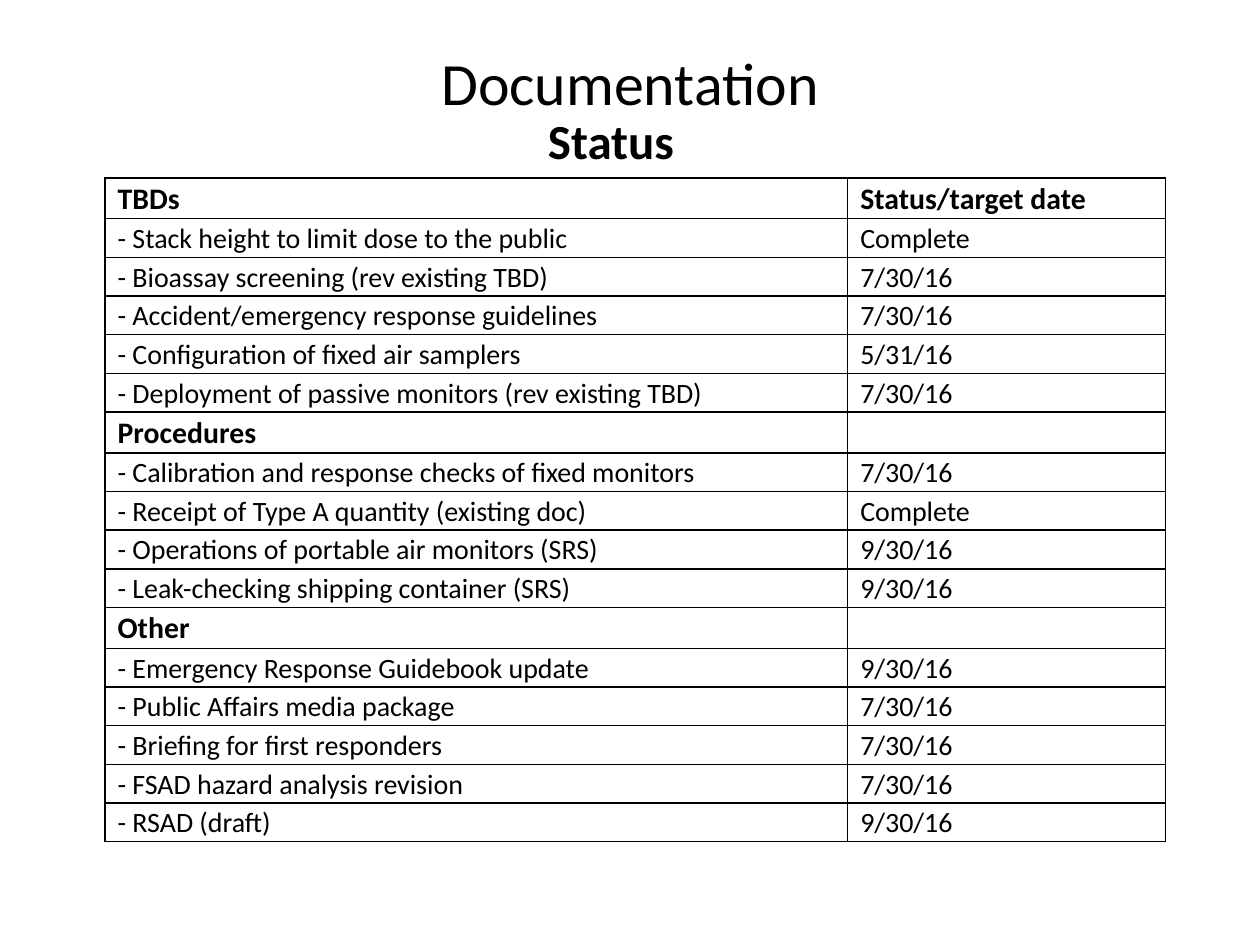
from lxml.etree import SubElement
from pptx import Presentation
from pptx.dml.color import RGBColor
from pptx.enum.text import MSO_ANCHOR, PP_ALIGN
from pptx.oxml.ns import qn
from pptx.util import Pt

FONT = "Calibri"
BLACK = "000000"
TITLE = "Documentation"
SUBTITLE = "Status"
SECTIONS = [
    ("TBDs", "Status/target date", [
        ("Stack height to limit dose to the public", "Complete"),
        ("Bioassay screening (rev existing TBD)", "7/30/16"),
        ("Accident/emergency response guidelines", "7/30/16"),
        ("Configuration of fixed air samplers", "5/31/16"),
        ("Deployment of passive monitors (rev existing TBD)", "7/30/16"),
    ]),
    ("Procedures", "", [
        ("Calibration and response checks of fixed monitors", "7/30/16"),
        ("Receipt of Type A quantity (existing doc)", "Complete"),
        ("Operations of portable air monitors (SRS)", "9/30/16"),
        ("Leak-checking shipping container (SRS)", "9/30/16"),
    ]),
    ("Other", "", [
        ("Emergency Response Guidebook update", "9/30/16"),
        ("Public Affairs media package", "7/30/16"),
        ("Briefing for first responders", "7/30/16"),
        ("FSAD hazard analysis revision", "7/30/16"),
        ("RSAD (draft)", "9/30/16"),
    ]),
]
LEFT, TOP = 60, 101.6
COL_WIDTHS = (424.4, 181.6)
HEAD_HEIGHT, ITEM_HEIGHT = 23.4, 22.1
HEAD_SIZE, ITEM_SIZE = 17, 16


def rgb(value):
    return RGBColor.from_string(value)


def add_run(p, text, size, bold=False):
    r = p.add_run()
    r.text = text
    r.font.name = FONT
    r.font.size = Pt(size)
    r.font.bold = bold
    r.font.color.rgb = rgb(BLACK)


def add_text(s, box, text, size, bold=False, wrap=True, align=PP_ALIGN.LEFT,
             anchor=MSO_ANCHOR.TOP):
    tf = s.shapes.add_textbox(*map(Pt, box)).text_frame
    tf.word_wrap = wrap
    tf.vertical_anchor = anchor
    p = tf.paragraphs[0]
    p.alignment = align
    add_run(p, text, size, bold)


def add_borders(cell):
    tc_pr = cell._tc.get_or_add_tcPr()
    for side in ("a:lnL", "a:lnR", "a:lnT", "a:lnB"):
        ln = SubElement(tc_pr, qn(side), w=str(Pt(1)))
        fill = SubElement(ln, qn("a:solidFill"))
        SubElement(fill, qn("a:srgbClr"), val=BLACK)


def fill_cell(cell, text, size, bold):
    add_borders(cell)
    cell.fill.background()
    cell.margin_left = cell.margin_right = Pt(7.2)
    cell.margin_top, cell.margin_bottom = Pt(1.8), Pt(0.75)
    p = cell.text_frame.paragraphs[0]
    if text:
        add_run(p, text, size, bold)
    else:  # keeps an empty cell from stretching its row
        SubElement(p._p, qn("a:endParaRPr"), sz=str(size * 100))


def add_status_table(s):
    rows = []
    for heading, status, items in SECTIONS:
        rows.append((heading, status, True))
        rows += [(f"- {item}", date, False) for item, date in items]
    heights = [HEAD_HEIGHT if head else ITEM_HEIGHT for *_, head in rows]
    table = s.shapes.add_table(len(rows), len(COL_WIDTHS), Pt(LEFT), Pt(TOP),
                               Pt(sum(COL_WIDTHS)), Pt(sum(heights))).table
    table.first_row = table.horz_banding = False
    for column, width in zip(table.columns, COL_WIDTHS):
        column.width = Pt(width)
    for row, height, (*texts, head) in zip(table.rows, heights, rows):
        row.height = Pt(height)
        for cell, text in zip(row.cells, texts):
            fill_cell(cell, text, HEAD_SIZE if head else ITEM_SIZE, head)


prs = Presentation()
prs.slide_width, prs.slide_height = Pt(720), Pt(540)
s = prs.slides.add_slide(prs.slide_layouts[6])
add_text(s, (36, 21.6, 648, 50.4), TITLE, 34.2, align=PP_ALIGN.CENTER,
         anchor=MSO_ANCHOR.MIDDLE)
add_text(s, (306, 59.8, 87, 41), SUBTITLE, 28, bold=True, wrap=False)
add_status_table(s)
prs.save("out.pptx")
